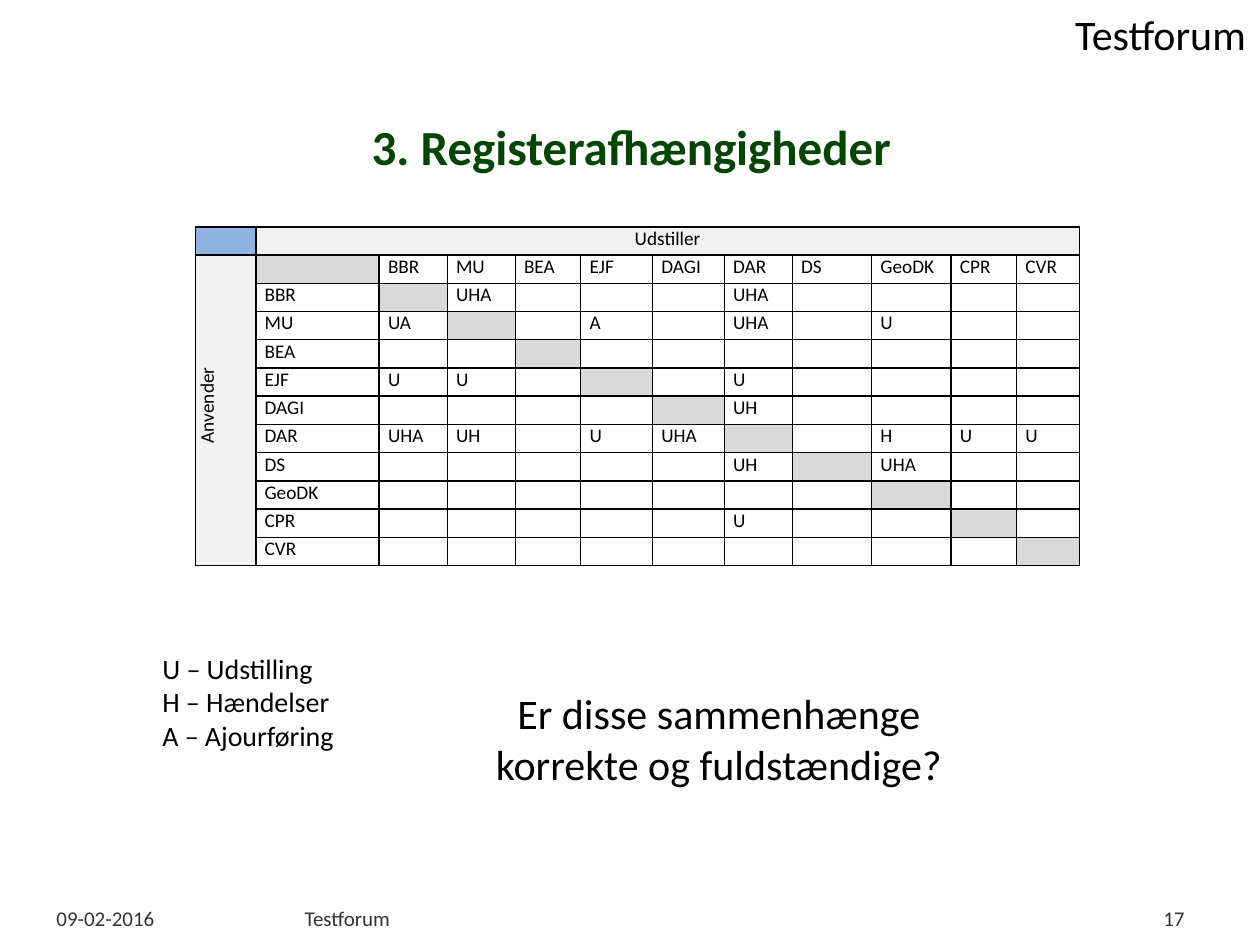
import pptx
import pptx.dml.color
import pptx.enum.text
import pptx.oxml.ns
import pptx.util
from lxml import etree

Inches, Pt = pptx.util.Inches, pptx.util.Pt
RGBColor = pptx.dml.color.RGBColor
ALIGN = pptx.enum.text.PP_ALIGN
ANCHOR = pptx.enum.text.MSO_ANCHOR
qn = pptx.oxml.ns.qn

BLACK = RGBColor(0x00, 0x00, 0x00)
GREEN = RGBColor(0x00, 0x46, 0x00)
FOOTER = RGBColor(0x33, 0x33, 0x33)
BLUE = RGBColor(0x8D, 0xB3, 0xE2)
HEADER = RGBColor(0xF2, 0xF2, 0xF2)
DIAGONAL = RGBColor(0xD9, 0xD9, 0xD9)

# Content: box (left, top, width, height), lines, alignment, font, frame settings
TITLE_FONT = {"size": Pt(28), "color": GREEN, "bold": True}
LARGE = {"size": Pt(24), "color": BLACK}
LEGEND = {"size": Pt(16), "color": BLACK}
SMALL = {"size": Pt(12), "color": FOOTER}
CELL = {"size": Pt(11), "color": BLACK}

TEXTS = [
    ((8.42, 0.02, 1.58, 0.5), ["Testforum"], ALIGN.CENTER, LARGE, {"word_wrap": False}),
    ((0.51, 0.84, 9, 0.63), ["3. Registerafhængigheder"], ALIGN.CENTER, TITLE_FONT,
     {"vertical_anchor": ANCHOR.MIDDLE}),
    ((0.35, 7.14, 2.37, 0.16), ["09-02-2016"], ALIGN.LEFT, SMALL, {}),
    ((2.32, 7.14, 6.22, 0.16), ["Testforum"], ALIGN.LEFT, SMALL, {}),
    ((8.78, 7.14, 0.72, 0.16), ["17"], ALIGN.RIGHT, SMALL, {}),
    ((1.19, 5.12, 5, 0.91), ["U – Udstilling", "H – Hændelser", "A – Ajourføring"],
     ALIGN.LEFT, LEGEND, {}),
    ((3.61, 5.41, 4.19, 0.91), ["Er disse sammenhænge korrekte og fuldstændige?"],
     ALIGN.CENTER, LARGE, {}),
]

REGISTERS = ["BBR", "MU", "BEA", "EJF", "DAGI", "DAR", "DS", "GeoDK", "CPR", "CVR"]
DEPENDENCIES = {  # user register: {provider register: kinds}
    "BBR": {"MU": "UHA", "DAR": "UHA"},
    "MU": {"BBR": "UA", "EJF": "A", "DAR": "UHA", "GeoDK": "U"},
    "EJF": {"BBR": "U", "MU": "U", "DAR": "U"},
    "DAGI": {"DAR": "UH"},
    "DAR": {"BBR": "UHA", "MU": "UH", "EJF": "U", "DAGI": "UHA",
            "GeoDK": "H", "CPR": "U", "CVR": "U"},
    "DS": {"DAR": "UH", "GeoDK": "UHA"},
    "CPR": {"DAR": "U"},
}
COL_WIDTHS = [0.48, 0.98, 0.54, 0.54, 0.52, 0.57, 0.57, 0.54, 0.63, 0.63, 0.52, 0.5]
ROW_HEIGHT = 2.69 / 12
CELL_MARGINS = {"margin_left": Inches(0.07), "margin_right": Inches(0.07),
                "margin_top": 0, "margin_bottom": 0}


def set_attrs(obj, values):
    for name, value in values.items():
        setattr(obj, name, value)


def write(p, text, align, font):
    p.alignment = align
    r = p.add_run()
    r.text = text
    r.font.name = "Calibri"
    for name, value in font.items():
        if name == "color":
            r.font.color.rgb = value
        else:
            setattr(r.font, name, value)


def add_text(s, box, lines, align, font, frame):
    sp = s.shapes.add_textbox(*map(Inches, box))
    tf = sp.text_frame
    set_attrs(tf, {"word_wrap": True, **frame})
    for i, line in enumerate(lines):
        p = tf.add_paragraph() if i else tf.paragraphs[0]
        write(p, line, align, font)


def add_borders(cell):
    tc_pr = cell._tc.get_or_add_tcPr()
    for side in ("a:lnL", "a:lnR", "a:lnT", "a:lnB"):
        ln = etree.SubElement(tc_pr, qn(side), w=str(Pt(1)))
        fill = etree.SubElement(ln, qn("a:solidFill"))
        etree.SubElement(fill, qn("a:srgbClr"), val=str(BLACK))


def format_cell(cell, text="", fill=None, align=ALIGN.JUSTIFY):
    set_attrs(cell, CELL_MARGINS)
    add_borders(cell)
    if fill is None:
        cell.fill.background()
    else:
        cell.fill.solid()
        cell.fill.fore_color.rgb = fill
    p = cell.text_frame.paragraphs[0]
    if text:
        write(p, text, align, CELL)
    else:  # keeps empty rows as low as the filled ones
        etree.SubElement(p._p, qn("a:endParaRPr"), sz="1100")


def cell_content(row, col):
    if row == 0:
        return {"fill": BLUE} if col == 0 else {
            "text": "Udstiller" if col == 1 else "", "fill": HEADER, "align": ALIGN.CENTER}
    if col == 0:
        return {"text": "Anvender" if row == 1 else "", "fill": HEADER, "align": ALIGN.CENTER}
    if row == col:
        return {"fill": DIAGONAL}
    if row == 1:
        return {"text": REGISTERS[col - 2]}
    user = REGISTERS[row - 2]
    if col == 1:
        return {"text": user}
    return {"text": DEPENDENCIES.get(user, {}).get(REGISTERS[col - 2], "")}


def add_matrix(s):
    n = len(REGISTERS) + 2
    table = s.shapes.add_table(n, n, Inches(1.55), Inches(1.8), Inches(sum(COL_WIDTHS)),
                               Inches(ROW_HEIGHT * n)).table
    set_attrs(table, {"first_row": False, "horz_banding": False})
    for i, width in enumerate(COL_WIDTHS):
        table.columns[i].width = Inches(width)
        table.rows[i].height = Inches(ROW_HEIGHT)
    for row in range(n):
        for col in range(n):
            format_cell(table.cell(row, col), **cell_content(row, col))

    # Merged headings, the user heading turned upwards
    table.cell(0, 1).merge(table.cell(0, n - 1))
    table.cell(1, 0).merge(table.cell(n - 1, 0))
    user_cell = table.cell(1, 0)
    user_cell._tc.get_or_add_tcPr().set("vert", "vert270")
    p_pr = user_cell.text_frame.paragraphs[0]._p.get_or_add_pPr()
    p_pr.set("marL", str(Inches(0.08)))


def main():
    prs = pptx.Presentation()
    prs.slide_width, prs.slide_height = Inches(10), Inches(7.5)
    s = prs.slides.add_slide(prs.slide_layouts[6])
    for item in TEXTS:
        add_text(s, *item)
    add_matrix(s)
    prs.save("out.pptx")


if __name__ == "__main__":
    main()
